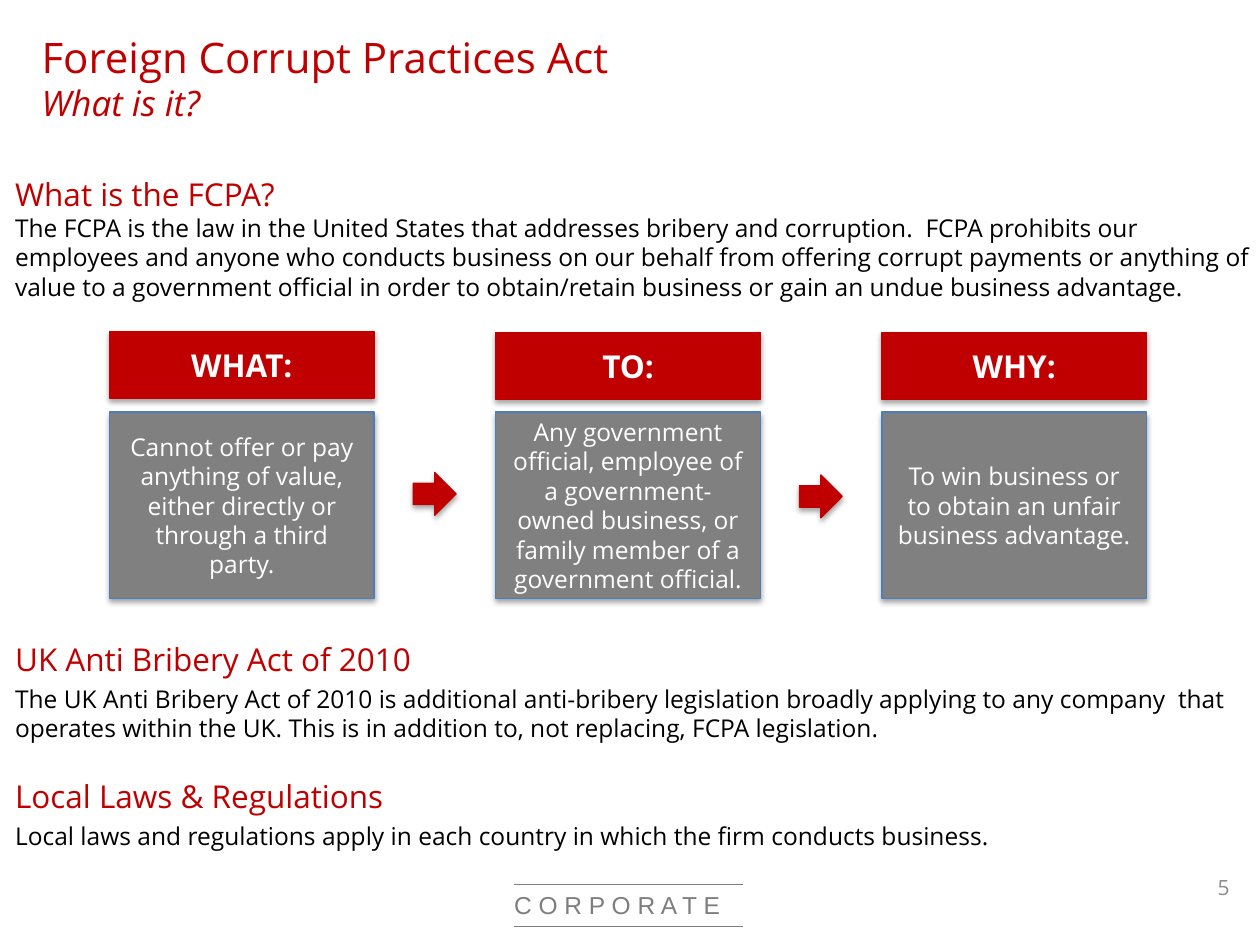
import pptx
import pptx.util
import pptx.dml.color
import pptx.enum.shapes
import pptx.enum.text
import pptx.oxml
import pptx.oxml.ns

Inches = pptx.util.Inches
Pt = pptx.util.Pt
ALIGN = pptx.enum.text.PP_ALIGN
ANCHOR = pptx.enum.text.MSO_ANCHOR
SHAPES = pptx.enum.shapes.MSO_SHAPE
RED, GRAY, BLUE = "C00000", "808080", "4B7EBC"
WHITE, BLACK, FOOTER, NUMBER = "FFFFFF", "000000", "7E7E7E", "8C8C8C"
SHADOW = (
    f'<a:effectLst {pptx.oxml.ns.nsdecls("a")}>'
    '<a:outerShdw blurRad="39370" dist="22860" dir="5400000" rotWithShape="0">'
    '<a:srgbClr val="000000"><a:alpha val="35000"/></a:srgbClr>'
    '</a:outerShdw></a:effectLst>'
)


def color(value):
    return pptx.dml.color.RGBColor.from_string(value)


def write(shape, paragraphs, align=ALIGN.LEFT, anchor=ANCHOR.TOP, margins=(0, 0, 0, 0)):
    """Fill a shape with (text, font values, space before) paragraphs."""
    frame = shape.text_frame
    frame.word_wrap = True
    frame.auto_size = pptx.enum.text.MSO_AUTO_SIZE.NONE
    frame.vertical_anchor = anchor
    for side, margin in zip(("left", "top", "right", "bottom"), margins):
        setattr(frame, f"margin_{side}", Inches(margin))
    for index, (text, values, before) in enumerate(paragraphs):
        paragraph = frame.add_paragraph() if index else frame.paragraphs[0]
        paragraph.alignment = align
        paragraph.space_before = Pt(before)
        run = paragraph.add_run()
        run.text = text
        for name, value in {"name": "Open Sans", **values}.items():
            if name == "color":
                run.font.color.rgb = color(value)
            else:
                setattr(run.font, name, value)


heading = {"size": Pt(18), "color": RED}
body = {"size": Pt(14), "color": BLACK}

presentation = pptx.Presentation()
presentation.slide_width = Inches(10)
presentation.slide_height = Inches(7.5)
slide = presentation.slides.add_slide(presentation.slide_layouts[5])

# Title with its italic second line
title = slide.shapes.title
title.left, title.top = Inches(0.33), Inches(0.25)
title.width, title.height = Inches(7.5), Inches(0.83)
write(title, [("Foreign Corrupt Practices Act", {"size": Pt(24), "color": RED}, 0)])
paragraph = title.text_frame.paragraphs[0]
paragraph.add_line_break()
subtitle = paragraph.add_run()
subtitle.text = "What is it?"
for name, value in {"name": "Open Sans", "size": Pt(20), "italic": True}.items():
    setattr(subtitle.font, name, value)
subtitle.font.color.rgb = color(RED)

# Text blocks, page number and footer label
text_blocks = [
    ((0, 1.39, 10, 1.1), ALIGN.LEFT, (0.12, 0, 0, 0), [
        ("What is the FCPA?", heading, 0),
        ("The FCPA is the law in the United States that addresses bribery and corruption.  "
         "FCPA prohibits our employees and anyone who conducts business on our behalf from "
         "offering corrupt payments or anything of value to a government official in order to "
         "obtain/retain business or gain an undue business advantage.", body, 0),
    ]),
    ((0.11, 5, 9.81, 1.78), ALIGN.LEFT, (0.01, 0.08, 0, 0), [
        ("UK Anti Bribery Act of 2010", heading, 0),
        ("The UK Anti Bribery Act of 2010 is additional anti-bribery legislation broadly "
         "applying to any company  that operates within the UK. This is in addition to, "
         "not replacing, FCPA legislation.", body, 3.5),
        ("Local Laws & Regulations", heading, 19.5),
        ("Local laws and regulations apply in each country in which the firm conducts business.",
         body, 3.5),
    ]),
    ((7.2, 6.94, 2.56, 0.2), ALIGN.RIGHT, (0, 0, 0, 0), [
        ("5", {"size": Pt(12), "color": NUMBER}, 0),
    ]),
    ((4.07, 7.07, 1.8, 0.25), ALIGN.LEFT, (0.01, 0, 0, 0), [
        ("C O R P O R A T E", {"name": "Arial", "size": Pt(14), "color": FOOTER}, 0),
    ]),
]
for place, align, margins, paragraphs in text_blocks:
    box = slide.shapes.add_textbox(*map(Inches, place))
    write(box, paragraphs, align, margins=margins)
box.text_frame.paragraphs[0].line_spacing = Pt(16.5)

# Three columns of header and description, with arrows between them
columns = [
    ("WHAT:", 2.63, "Cannot offer or pay anything of value, either directly or through "
                    "a third party."),
    ("TO:", 2.64, "Any government official, employee of a government-owned business, or "
                  "family member of a government official."),
    ("WHY:", 2.64, "To win business or to obtain an unfair business advantage."),
]
header_font = {"size": Pt(18), "bold": True, "color": WHITE}
description_font = {"size": Pt(14), "color": WHITE}
column_left, column_step = 0.87, 3.065
diagram = []
for index, (header, top, description) in enumerate(columns):
    left = column_left + index * column_step
    diagram += [
        (SHAPES.RECTANGLE, (left, top, 2.1, 0.53), RED, RED, header, header_font),
        (SHAPES.RECTANGLE, (left, 3.27, 2.1, 1.48), GRAY, BLUE, description, description_font),
    ]
for index, top in enumerate((3.75, 3.77)):
    left = 3.28 + index * column_step
    diagram.append((SHAPES.RIGHT_ARROW, (left, top, 0.34, 0.34), RED, RED, None, None))

for preset, place, fill, line, text, font in diagram:
    shape = slide.shapes.add_shape(preset, *map(Inches, place))
    shape.fill.solid()
    shape.fill.fore_color.rgb = color(fill)
    shape.line.color.rgb = color(line)
    shape.line.width = Pt(0.75)
    shape._element.spPr.append(pptx.oxml.parse_xml(SHADOW))
    if text:
        write(shape, [(text, font, 0)], ALIGN.CENTER, ANCHOR.MIDDLE, (0.1, 0.05, 0.1, 0.05))

# Rules above and below the footer label
for top in (7.02, 7.35):
    rule = slide.shapes.add_connector(
        pptx.enum.shapes.MSO_CONNECTOR.STRAIGHT,
        Inches(4.08), Inches(top), Inches(5.9), Inches(top))
    rule.line.color.rgb = color(FOOTER)
    rule.line.width = Pt(0.5)
    rule._element.spPr.append(pptx.oxml.parse_xml(
        f'<a:effectLst {pptx.oxml.ns.nsdecls("a")}/>'))

presentation.save("out.pptx")
